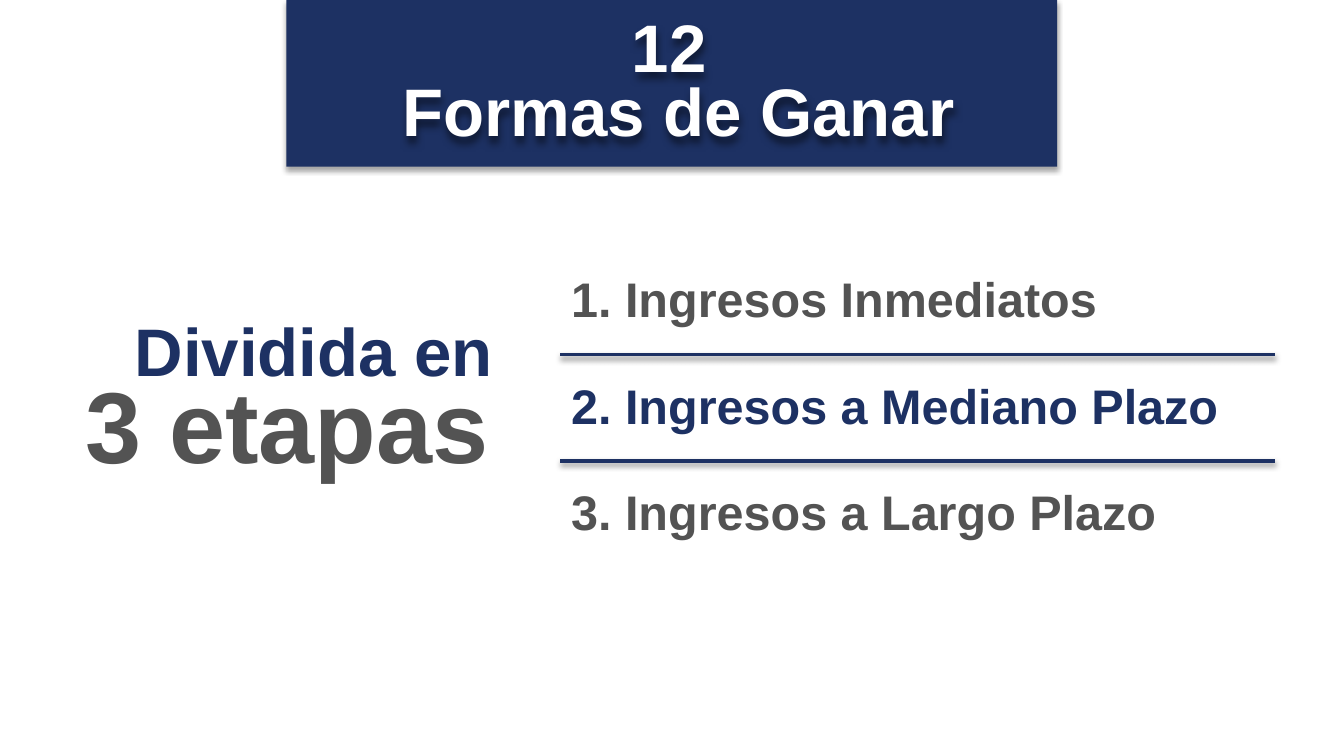
import pptx
import pptx.util
import pptx.dml.color
import pptx.enum.shapes
import pptx.enum.text
import pptx.oxml
import pptx.oxml.ns

Pt = pptx.util.Pt
ALIGN = pptx.enum.text.PP_ALIGN
COLORS = {"navy": "1D3163", "gray": "535353", "white": "FFFFFF", "shadow": "000000"}


def rgb(name):
    return pptx.dml.color.RGBColor.from_string(COLORS[name])


def add_shadow(shape, blur, distance, opacity):
    """Give the shape a soft shadow straight below it."""
    shape._element.spPr.append(pptx.oxml.parse_xml(
        f'<a:effectLst {pptx.oxml.ns.nsdecls("a")}>'
        f'<a:outerShdw blurRad="{Pt(blur)}" dist="{Pt(distance)}" dir="5400000" rotWithShape="0">'
        f'<a:srgbClr val="{COLORS["shadow"]}"><a:alpha val="{opacity * 1000}"/></a:srgbClr>'
        '</a:outerShdw></a:effectLst>'))


def add_text(page, left, top, width, height, lines, size, color, spacing, align):
    box = page.shapes.add_textbox(Pt(left), Pt(top), Pt(width), Pt(height))
    frame = box.text_frame
    frame.word_wrap = True
    frame.vertical_anchor = pptx.enum.text.MSO_ANCHOR.MIDDLE
    frame.margin_left = frame.margin_right = Pt(3.6)
    frame.margin_top = frame.margin_bottom = Pt(3.6)
    for index, line in enumerate(lines):
        para = frame.paragraphs[0] if index == 0 else frame.add_paragraph()
        para.text = line
        para.alignment = align
        para.line_spacing = spacing
        para.font.name = "Arial"
        para.font.size = Pt(size)
        para.font.bold = True
        para.font.color.rgb = rgb(color)
    return box


def add_banner(page, left, top, width, height):
    banner = page.shapes.add_shape(pptx.enum.shapes.MSO_SHAPE.RECTANGLE,
                                   Pt(left), Pt(top), Pt(width), Pt(height))
    banner.fill.solid()
    banner.fill.fore_color.rgb = rgb("navy")
    banner.line.fill.background()
    add_shadow(banner, 3, 1.8, 35)
    title = add_text(page, left + 3.6, top + 6.5, width, 78.5, ["12 ", "Formas de Ganar"],
                     36, "white", 0.8, ALIGN.CENTER)
    add_shadow(title, 4, 3, 50)


def add_summary(page, left, top, width):
    line_height = 32.4
    add_text(page, left, top + 44.6, width, line_height, ["3 etapas"],
             54, "gray", 0.5, ALIGN.CENTER)
    add_text(page, left + 14.4, top, width, line_height, ["Dividida en"],
             36, "navy", 0.6, ALIGN.CENTER)


def add_stages(page, left, top, width, pitch):
    """List the stages, with a rule between each two."""
    stages = [("1. Ingresos Inmediatos", "gray", 0.5, 0),
              ("2. Ingresos a Mediano Plazo", "navy", 0.8, -2.4),
              ("3. Ingresos a Largo Plazo", "gray", 0.8, -2.4)]
    for index, (text, color, spacing, shift) in enumerate(stages):
        row_top = top + index * pitch
        add_text(page, left + 2.2, row_top + shift, width - 18, 32.4, [text],
                 26, color, spacing, ALIGN.LEFT)
        if index < len(stages) - 1:
            rule_y = Pt(row_top + 41)
            rule = page.shapes.add_connector(pptx.enum.shapes.MSO_CONNECTOR.STRAIGHT,
                                             Pt(left), rule_y, Pt(left + width), rule_y)
            rule.line.color.rgb = rgb("navy")
            rule.line.width = Pt(2)
            add_shadow(rule, 3, 1.6, 38)


def main():
    deck = pptx.Presentation()
    deck.slide_width, deck.slide_height = Pt(720), Pt(405)
    page = deck.slides.add_slide(deck.slide_layouts[6])
    add_banner(page, 153.4, 0, 413, 89.3)
    add_summary(page, 16.6, 177.8, 274.3)
    add_stages(page, 300.2, 149, 383, 56.9)
    deck.save("out.pptx")


if __name__ == "__main__":
    main()
